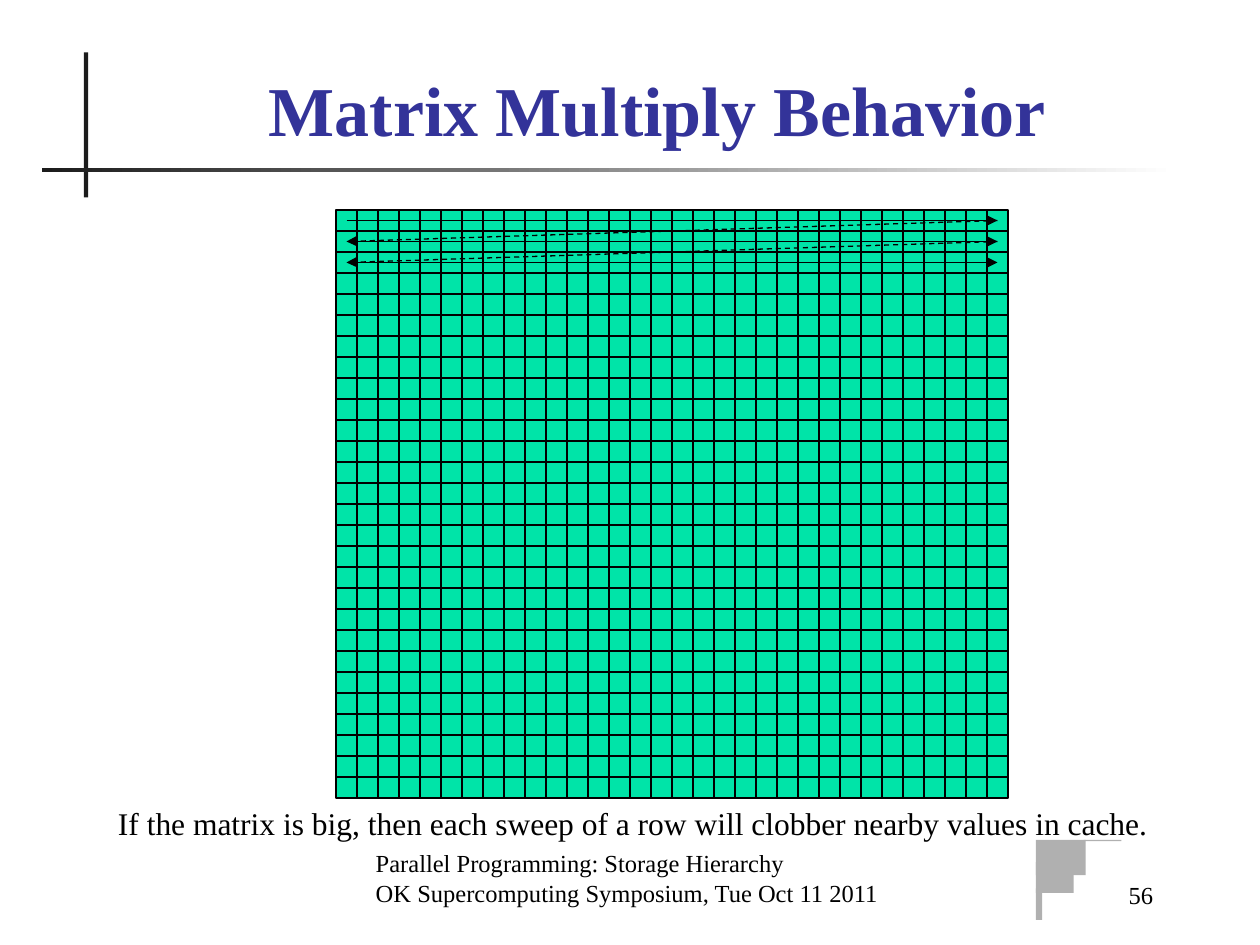
"""Build the Matrix Multiply Behavior slide on a grid of 60 by 45 square cells."""
from pptx import Presentation
from pptx.dml.color import RGBColor
from pptx.enum.dml import MSO_LINE
from pptx.enum.shapes import MSO_CONNECTOR, MSO_SHAPE
from pptx.enum.text import MSO_ANCHOR, PP_ALIGN
from pptx.oxml.ns import qn
from pptx.util import Inches, Pt
from lxml.etree import SubElement

BLACK = RGBColor(0x00, 0x00, 0x00)
WHITE = RGBColor(0xFF, 0xFF, 0xFF)
DARK = RGBColor(0x1C, 0x1C, 0x1C)
GRAY = RGBColor(0xB0, 0xB0, 0xB0)
NAVY = RGBColor(0x33, 0x33, 0x99)
GREEN = RGBColor(0x00, 0xE4, 0xA8)

prs = Presentation()
prs.slide_width, prs.slide_height = Inches(10), Inches(7.5)
s = prs.slides.add_slide(prs.slide_layouts[6])
CELL = prs.slide_width // 60
LEFT, TOP, COLS, ROWS = 16, 10, 32, 28
RIGHT, BOTTOM = LEFT + COLS, TOP + ROWS


def add_rect(x, y, w, h, color):
    sp = s.shapes.add_shape(MSO_SHAPE.RECTANGLE, *(round(v * CELL) for v in (x, y, w, h)))
    sp.shadow.inherit = False
    sp.fill.solid()
    sp.fill.fore_color.rgb = color
    sp.line.fill.background()
    return sp


def add_line(x1, y1, x2, y2, arrow=False):
    cxn = s.shapes.add_connector(
        MSO_CONNECTOR.STRAIGHT, *(round(v * CELL) for v in (x1, y1, x2, y2)))
    cxn.line.color.rgb = BLACK
    cxn.line.width = Pt(0.75)
    if arrow:
        SubElement(cxn.line._get_or_add_ln(), qn("a:tailEnd"), type="triangle")
    SubElement(cxn._element.spPr, qn("a:effectLst"))
    return cxn


add_rect(4, 2.5, 0.2, 6.9, DARK)
rule = add_rect(2, 8, 54, 0.2, DARK)
rule.fill.gradient()
rule.fill.gradient_angle = 0
for stop, color in zip(rule.fill.gradient_stops, (DARK, WHITE)):
    stop.color.rgb = color

for x, y, w, h in ((49.33, 40, 2.37, 1.67), (49.33, 41.05, 1.8, 1.47),
                   (49.33, 42.3, 0.3, 1.5), (51.6, 40, 1.8, 0.06)):
    add_rect(x, y, w, h, GRAY)

matrix = add_rect(LEFT, TOP, COLS, ROWS, GREEN)
matrix.line.color.rgb = BLACK
matrix.line.width = Pt(0.75)

for col in range(1, COLS):
    cxn = add_line(LEFT + col, TOP, LEFT + col, BOTTOM)
    if col == COLS / 2:
        cxn.begin_connect(matrix, 0)
        cxn.end_connect(matrix, 2)
for row in range(1, ROWS):
    cxn = add_line(LEFT, TOP + row, RIGHT, TOP + row)
    if row == ROWS / 2:
        cxn.begin_connect(matrix, 1)
        cxn.end_connect(matrix, 3)

for row in range(3):
    y = TOP + row + 0.5
    if row:
        sweep_back = add_line(RIGHT - 0.5, y - 1, LEFT + 0.5, y, arrow=True)
        sweep_back.line.dash_style = MSO_LINE.DASH
    add_line(LEFT + 0.5, y, RIGHT - 0.5, y, arrow=True)

TEXTS = (
    (5, 3, 52.6, 4.45, ("Matrix Multiply Behavior",),
     40, True, NAVY, PP_ALIGN.CENTER, MSO_ANCHOR.BOTTOM, True),
    (17.3, 40.5, 26.2, 3, ("Parallel Programming: Storage Hierarchy",
                           "OK Supercomputing Symposium, Tue Oct 11 2011"),
     14, False, BLACK, PP_ALIGN.LEFT, MSO_ANCHOR.BOTTOM, True),
    (47, 40.6, 8.5, 3, ("56",),
     14, False, BLACK, PP_ALIGN.RIGHT, MSO_ANCHOR.BOTTOM, True),
    (5, 38, 50.3, 2.4,
     ("If the matrix is big, then each sweep of a row will clobber nearby values in cache.",),
     18, False, BLACK, PP_ALIGN.CENTER, MSO_ANCHOR.TOP, False),
)
for x, y, w, h, lines, size, bold, color, align, anchor, wrap in TEXTS:
    tf = s.shapes.add_textbox(*(round(v * CELL) for v in (x, y, w, h))).text_frame
    tf.word_wrap = wrap
    tf.vertical_anchor = anchor
    tf.text = "\n".join(lines)
    for p in tf.paragraphs:
        p.alignment = align
        p.font.name = "Times New Roman"
        p.font.size = Pt(size)
        p.font.bold = bold
        p.font.color.rgb = color

prs.save("out.pptx")
